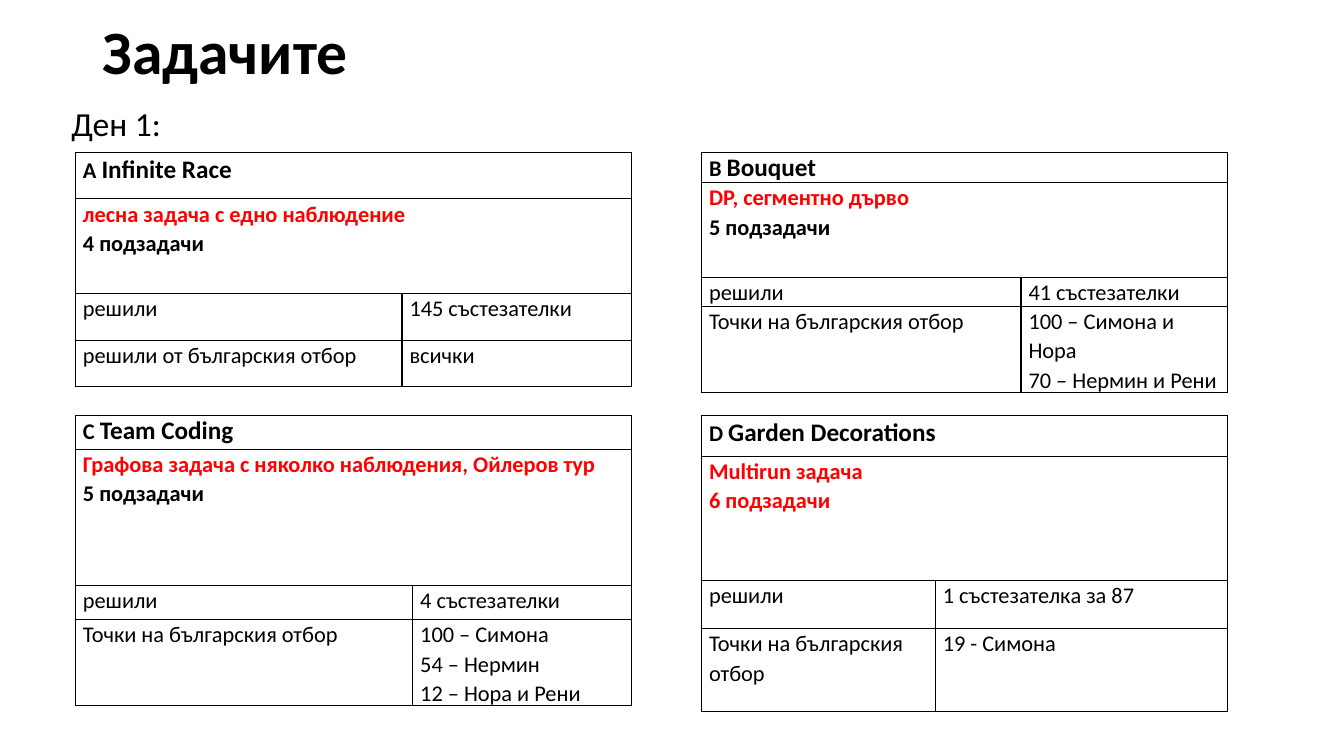
import lxml.etree
import pptx
import pptx.dml.color
import pptx.enum.text
import pptx.oxml.ns
import pptx.util
from pptx.util import Cm

BLACK = "000000"
RED = "FF0000"


def rgb(value):
    return pptx.dml.color.RGBColor.from_string(value)


class TaskSlide:
    typeface = "Calibri"
    body_size = 16
    heading_size = 18
    spacing = 1.07

    def __init__(self, deck):
        self.slide = deck.slides.add_slide(deck.slide_layouts[6])

    def style(self, font, size, color=BLACK, bold=False):
        font.name = self.typeface
        font.size = pptx.util.Pt(size)
        font.bold = bold
        font.color.rgb = rgb(color)

    def label(self, text, left, top, width, height, size, bold=False, spacing=None):
        frame = self.slide.shapes.add_textbox(Cm(left), Cm(top), Cm(width), Cm(height)).text_frame
        frame.word_wrap = True
        frame.vertical_anchor = pptx.enum.text.MSO_ANCHOR.MIDDLE
        paragraph = frame.paragraphs[0]
        paragraph.text = text
        paragraph.line_spacing = spacing
        self.style(paragraph.font, size, bold=bold)

    def border(self, cell):
        properties = cell._tc.get_or_add_tcPr()
        for position, side in enumerate(("lnL", "lnR", "lnT", "lnB")):
            line = lxml.etree.Element(pptx.oxml.ns.qn(f"a:{side}"), w="12700")
            fill = lxml.etree.SubElement(line, pptx.oxml.ns.qn("a:solidFill"))
            lxml.etree.SubElement(fill, pptx.oxml.ns.qn("a:srgbClr"), val=BLACK)
            properties.insert(position, line)

    def fill_cell(self, cell, lines, colors=(BLACK,), bold=False):
        cell.text = "\n".join(lines)
        for index, paragraph in enumerate(cell.text_frame.paragraphs):
            paragraph.line_spacing = self.spacing
            self.style(paragraph.font, self.body_size, colors[index % len(colors)], bold)

    def heading(self, cell, letter, name, spacing):
        paragraph = cell.text_frame.paragraphs[0]
        paragraph.line_spacing = spacing
        for text, size in ((letter + " ", self.body_size), (name, self.heading_size)):
            run = paragraph.add_run()
            run.text = text
            self.style(run.font, size, bold=True)

    def task(self, left, top, widths, heights, letter, name, summary, results,
             colors=(RED, BLACK), heading_spacing=None):
        table = self.slide.shapes.add_table(
            len(heights), len(widths), Cm(left), Cm(top), Cm(sum(widths)), Cm(sum(heights))
        ).table
        table.first_row = table.horz_banding = False
        for column, width in zip(table.columns, widths):
            column.width = Cm(width)
        for row, height in zip(table.rows, heights):
            row.height = Cm(height)
        for cell in table.iter_cells():
            cell.margin_left = cell.margin_right = Cm(0.19)
            cell.margin_top = cell.margin_bottom = 0
            cell.fill.background()
            self.border(cell)
            self.style(cell.text_frame.paragraphs[0].font, self.body_size)
        for row in range(2):
            table.cell(row, 0).merge(table.cell(row, 1))
        self.heading(table.cell(0, 0), letter, name, heading_spacing)
        self.fill_cell(table.cell(1, 0), summary, colors, bold=True)
        for row, (caption, values) in enumerate(results, start=2):
            self.fill_cell(table.cell(row, 0), [caption])
            self.fill_cell(table.cell(row, 1), values)


def main():
    deck = pptx.Presentation()
    deck.slide_width = Cm(33.87)
    deck.slide_height = Cm(19.05)
    page = TaskSlide(deck)
    page.label("Задачите", 2.34, 0.3, 29.21, 2.16, 44, bold=True, spacing=0.9)
    page.label("Ден 1:", 1.55, 2.46, 26.44, 1.27, 24)

    left, right = 1.9, 17.68
    upper, lower = 3.84, 10.46
    solved = "решили"
    team_points = "Точки на българския отбор"
    page.task(
        left, upper, (8.23, 5.78), (1.17, 2.39, 1.17, 1.17), "А", "Infinite Race",
        ["лесна задача с едно наблюдение", "4 подзадачи"],
        [(solved, ["145 състезателки"]), ("решили от българския отбор", ["всички"])],
        heading_spacing=page.spacing,
    )
    page.task(
        right, upper, (8.05, 5.21), (0.74, 2.39, 0.71, 2.16), "B", "Bouquet",
        ["DP, сегментно дърво", "5 подзадачи"],
        [(solved, ["41 състезателки"]),
         (team_points, ["100 – Симона и Нора", "70 – Нермин и Рени"])],
    )
    page.task(
        left, lower, (8.5, 5.51), (0.86, 3.43, 0.86, 2.16), "C", "Team Coding",
        ["Графова задача с няколко наблюдения, Ойлеров тур", "5 подзадачи"],
        [(solved, ["4 състезателки"]),
         (team_points, ["100 – Симона", "54 – Нермин", "12 – Нора и Рени"])],
    )
    page.task(
        right, lower, (5.89, 7.37), (1.04, 3.12, 1.22, 2.08), "D", "Garden Decorations",
        ["Multirun задача", "6 подзадачи"],
        [(solved, ["1 състезателкa за 87"]), (team_points, ["19 - Симона"])],
        colors=(RED,), heading_spacing=page.spacing,
    )
    deck.save("out.pptx")


if __name__ == "__main__":
    main()
